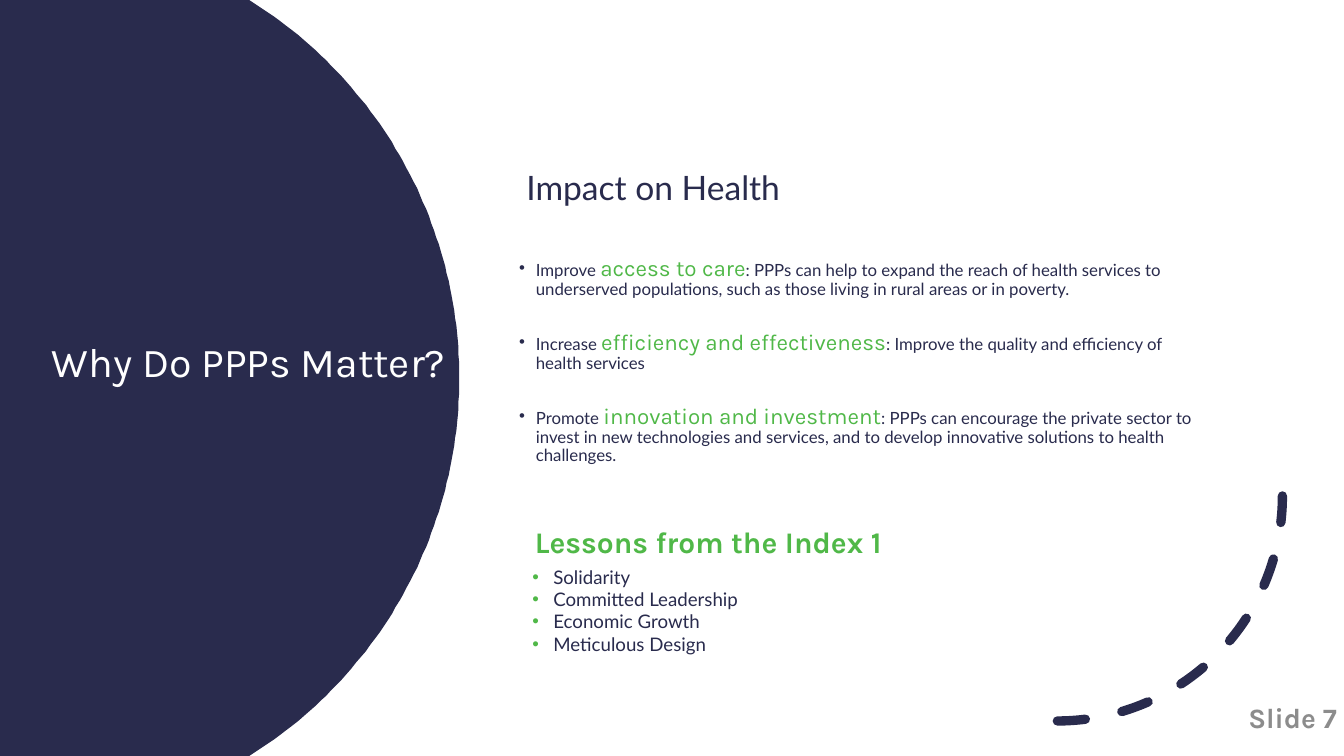
"""Build the slide on why PPPs matter for health."""
from math import asin, cos, sin

from lxml.etree import SubElement
from pptx import Presentation
from pptx.dml.color import RGBColor
from pptx.enum.dml import MSO_LINE
from pptx.enum.shapes import MSO_SHAPE as Shape
from pptx.enum.text import MSO_ANCHOR as Anchor, PP_ALIGN as Align
from pptx.oxml.ns import qn
from pptx.util import Pt

PX = 9525
NAVY, GREEN, WHITE, GREY = "292B4D", "50B848", "FFFFFF", "8C8C8C"


def style(font, name, size, color, bold=None):
    font.name, font.size, font.bold = name, Pt(size), bold
    font.color.rgb = RGBColor.from_string(color)


def bullet(paragraph, indent, hanging, color):
    props = paragraph._p.get_or_add_pPr()
    props.set("marL", str(indent * PX))
    props.set("indent", str(-hanging * PX))
    SubElement(SubElement(props, qn("a:buClr")), qn("a:srgbClr")).set("val", color)
    SubElement(props, qn("a:buFont")).set("typeface", "Arial")
    SubElement(props, qn("a:buChar")).set("char", "•")


deck = Presentation()
deck.slide_width, deck.slide_height = 1920 * PX, 1080 * PX
slide = deck.slides.add_slide(deck.slide_layouts[6])
shapes = slide.shapes

center_x, center_y, radius, steps = 20, 540, 636, 120
half_angle = asin(center_y / radius)
angles = [half_angle * (2 * i / steps - 1) for i in range(steps + 1)]
rim = [(center_x + radius * cos(a), center_y + radius * sin(a)) for a in angles]
outline = shapes.build_freeform(0, 0, scale=PX)
outline.add_line_segments(rim + [(0, 1080)])
disc = outline.convert_to_shape()
disc.shadow.inherit = False
disc.fill.solid()
disc.fill.fore_color.rgb = RGBColor.from_string(NAVY)
disc.line.fill.background()

arc = shapes.add_shape(Shape.ARC, 1189 * PX, 387 * PX, 643 * PX, 643 * PX)
arc.shadow.inherit = False
arc.fill.background()
arc.line.color.rgb = RGBColor.from_string(NAVY)
arc.line.width = Pt(10)
arc.line.dash_style = MSO_LINE.DASH
arc.line._get_or_add_ln().set("cap", "rnd")
arc._element.spPr.find(qn("a:xfrm")).set("flipV", "1")

headings = [
    ("Why Do PPPs Matter?", (64, 169, 593, 703), "Karla", 44, WHITE, None, Align.LEFT, 0.9, 10),
    ("Impact on Health", (742, 219, 719, 103), "Lato", 36, NAVY, None, Align.LEFT, Pt(39), 10),
    ("Lessons from the Index 1", (764, 695, 516, 90), "Karla", 32, GREEN, True, Align.LEFT, Pt(78), 0),
    ("Slide 7", (1488, 995, 432, 58), "Karla", 30, GREY, True, Align.RIGHT, 1.0, 10),
]
for text, box, face, size, color, bold, align, spacing, margin in headings:
    frame = shapes.add_textbox(*[n * PX for n in box]).text_frame
    frame.word_wrap = True
    frame.vertical_anchor = Anchor.MIDDLE if margin else Anchor.TOP
    frame.margin_left = frame.margin_right = margin * PX
    frame.margin_top = frame.margin_bottom = margin // 2 * PX
    heading = frame.paragraphs[0]
    heading.text, heading.alignment, heading.line_spacing = text, align, spacing
    style(heading.font, face, size, color, bold)

impacts = [
    ("Improve ", "access to care", ":\u00a0PPPs can help to expand the reach of health services to "
     "underserved populations, such as those living in rural areas or in poverty."),
    ("Increase ", "efficiency and effectiveness",
     ":\u00a0Improve the quality and efficiency of health services"),
    ("Promote ", "innovation and investment", ":\u00a0PPPs can encourage the private sector to "
     "invest in new technologies and services, and to develop innovative solutions to health "
     "challenges."),
]
impact_frame = shapes.add_textbox(720 * PX, 362 * PX, 1002 * PX, 320 * PX).text_frame
impact_frame.word_wrap = True
for i, (verb, goal, detail) in enumerate(impacts):
    impact = impact_frame.add_paragraph() if i else impact_frame.paragraphs[0]
    impact.line_spacing = 0.9
    impact.space_before = Pt(34 if i else 0)
    bullet(impact, 36, 24, NAVY)
    for text, face, size, color in [(verb, "Lato", 18, NAVY), (goal, "Karla", 24, GREEN),
                                    (detail, "Lato", 18, NAVY)]:
        run = impact.add_run()
        run.text = text
        style(run.font, face, size, color)

lessons = ["Solidarity", "Committed Leadership", "Economic Growth", "Meticulous Design"]
lesson_frame = shapes.add_textbox(751 * PX, 803 * PX, 438 * PX, 204 * PX).text_frame
lesson_frame.word_wrap = True
for i, text in enumerate(lessons):
    lesson = lesson_frame.add_paragraph() if i else lesson_frame.paragraphs[0]
    lesson.text = text
    bullet(lesson, 30, 30, GREEN)
    style(lesson.font, "Lato", 20, NAVY)

deck.save("out.pptx")
